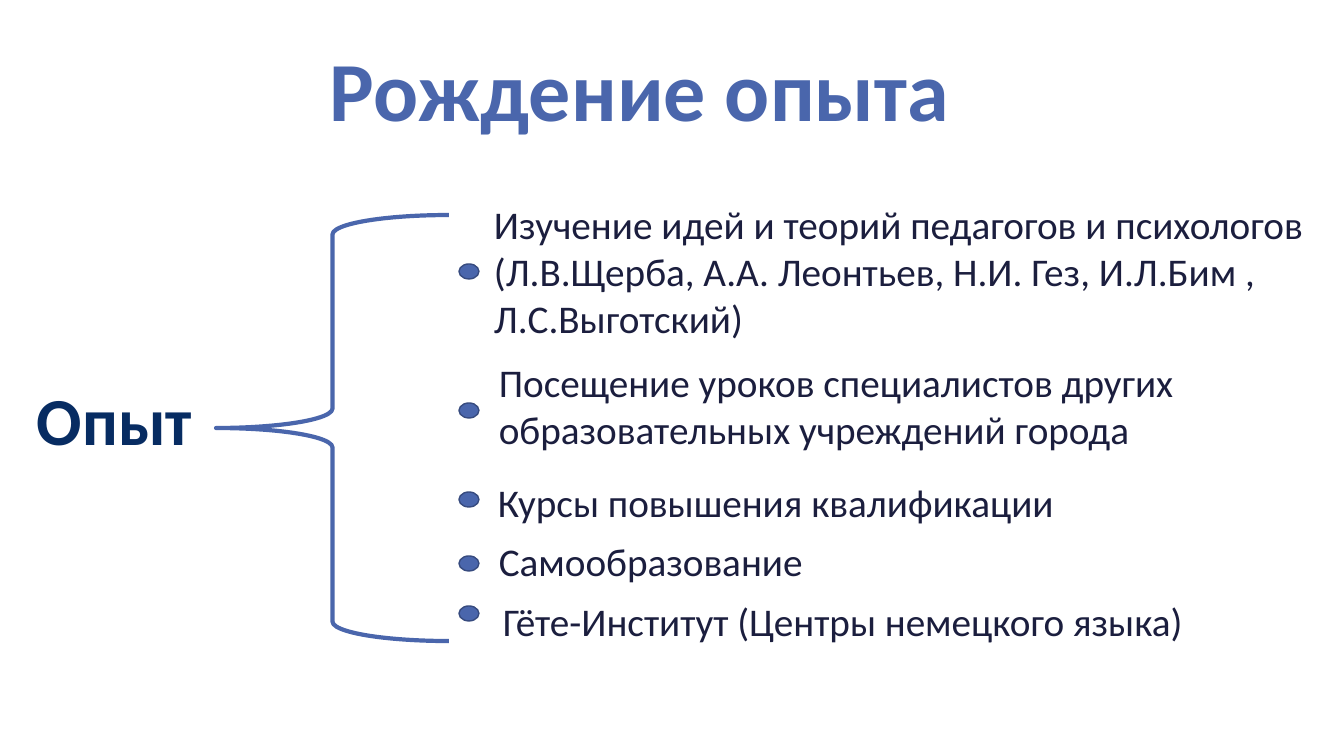
import pptx
import pptx.util
import pptx.dml.color
import pptx.enum.shapes
import pptx.enum.text

RGB = pptx.dml.color.RGBColor
BLUE = RGB(0x4A, 0x66, 0xAC)
DARK_BLUE = RGB(0x37, 0x4B, 0x7F)
NAVY = RGB(0x07, 0x2C, 0x62)
INK = RGB(0x1B, 0x1E, 0x3E)

# Content
TITLE = "Рождение опыта"
TOPIC = "Опыт"
# text, left, top, width, height, top of its dot (px)
SOURCES = [
    ("Изучение идей и теорий педагогов и психологов (Л.В.Щерба, А.А. Леонтьев, "
     "Н.И. Гез, И.Л.Бим , Л.С.Выготский)", 484, 195, 829, 152, 264),
    ("Посещение уроков специалистов других образовательных учреждений города",
     489, 353, 774, 105, 403),
    ("Курсы повышения квалификации", 488, 473, 774, 58, 492),
    ("Самообразование", 489, 532, 774, 58, 556),
    ("Гёте-Институт (Центры немецкого языка)", 493, 592, 774, 58, 606),
]
DOT_LEFT, DOT_WIDTH, DOT_HEIGHT = 459, 20, 15
BRACE = (216, 215, 233, 426)

PX = 914400 / 100.8


def px(*lengths):
    return [round(length * PX) for length in lengths]


presentation = pptx.Presentation()
presentation.slide_width, presentation.slide_height = px(1344, 756)
slide = presentation.slides.add_slide(presentation.slide_layouts[6])


def add_text(text, box, size, color, bold=False):
    frame = slide.shapes.add_textbox(*px(*box)).text_frame
    frame.word_wrap = True
    frame.text = text
    font = frame.paragraphs[0].runs[0].font
    font.name = "Calibri"
    font.size = pptx.util.Pt(size)
    font.color.rgb = color
    font.bold = bold
    return frame


def add_outlined(kind, box, color, width):
    shape = slide.shapes.add_shape(kind, *px(*box))
    shape.shadow.inherit = False
    shape.line.color.rgb = color
    shape.line.width = pptx.util.Pt(width)
    return shape


# Title and topic
title = add_text(TITLE, (320, 21, 1001, 146), 60, BLUE, True)
title.vertical_anchor = pptx.enum.text.MSO_ANCHOR.MIDDLE
title.paragraphs[0].line_spacing = 0.9
add_text(TOPIC, (27, 373, 190, 92), 48, NAVY, True)

# Brace from the topic to its sources
brace = add_outlined(pptx.enum.shapes.MSO_SHAPE.LEFT_BRACE, BRACE, BLUE, 3)
brace.fill.background()

# Sources with their dots
for text, left, top, width, height, dot_top in SOURCES:
    add_text(text, (left, top, width, height), 28, INK)
    dot = add_outlined(pptx.enum.shapes.MSO_SHAPE.OVAL,
                       (DOT_LEFT, dot_top, DOT_WIDTH, DOT_HEIGHT), DARK_BLUE, 1)
    dot.fill.solid()
    dot.fill.fore_color.rgb = BLUE

presentation.save("out.pptx")
